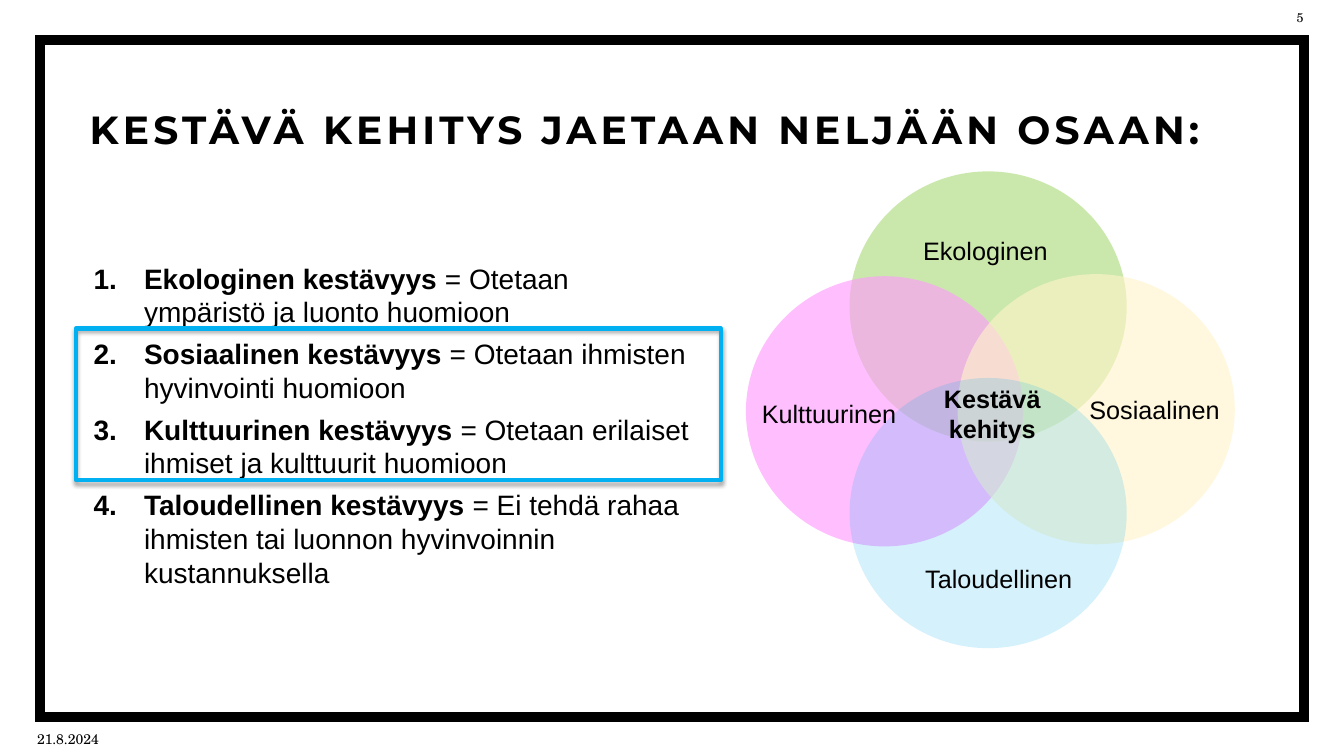
from lxml import etree
from pptx import Presentation
from pptx.dml.color import RGBColor
from pptx.enum.shapes import MSO_SHAPE
from pptx.enum.text import MSO_ANCHOR, MSO_AUTO_SIZE, PP_ALIGN
from pptx.oxml.ns import qn
from pptx.util import Pt

RECTANGLE, ELLIPSE = MSO_SHAPE.RECTANGLE, MSO_SHAPE.OVAL
TOP, MIDDLE = MSO_ANCHOR.TOP, MSO_ANCHOR.MIDDLE
LEFT, CENTER = PP_ALIGN.LEFT, PP_ALIGN.CENTER
NO_AUTOFIT = MSO_AUTO_SIZE.NONE

BLACK = RGBColor(0x00, 0x00, 0x00)
GREEN = RGBColor(0x92, 0xD0, 0x50)
PINK = RGBColor(0xFF, 0x99, 0xFF)
CREAM = RGBColor(0xFF, 0xF4, 0xCA)
BLUE = RGBColor(0x00, 0xB0, 0xF0)

BODY_FONT, TITLE_FONT, SMALL_FONT = "Arial", "Montserrat", "TeX Gyre Schola"

PILLARS = [
    ("Ekologinen kestävyys ", "= Otetaan ympäristö ja luonto huomioon"),
    ("Sosiaalinen kestävyys ", "= Otetaan ihmisten hyvinvointi huomioon"),
    ("Kulttuurinen kestävyys ",
     "= Otetaan erilaiset ihmiset ja kulttuurit huomioon"),
    ("Taloudellinen kestävyys ",
     "= Ei tehdä rahaa ihmisten tai luonnon hyvinvoinnin kustannuksella"),
]

# Left, top, colour and opacity in percent
CIRCLE_SIZE = (198, 193)
CIRCLES = [
    (606.8, 122.4, GREEN, 47),
    (532.8, 197.3, PINK, 62),
    (684, 195.8, CREAM, 62),
    (606.8, 270, BLUE, 17),
]
LABEL_SIZE = (128, 29)
LABELS = [
    ("Ekologinen", 652.3, 164.5),
    ("Sosiaalinen", 771.1, 277.9),
    ("Kulttuurinen", 537.1, 281.2),
    ("Taloudellinen", 653.8, 398.9),
]


def place(box, left, top, width, height):
    box.left, box.top = Pt(left), Pt(top)
    box.width, box.height = Pt(width), Pt(height)


def write(paragraph, text, font=BODY_FONT, size=18, bold=False, spacing=0):
    run = paragraph.add_run()
    run.text = text
    run.font.name, run.font.size, run.font.bold = font, Pt(size), bold
    run.font.color.rgb = BLACK
    if spacing:
        run.font._element.set("spc", str(spacing * 100))


def add_text_frame(slide, left, top, width, height, anchor=TOP):
    box = slide.shapes.add_textbox(Pt(left), Pt(top), Pt(width), Pt(height))
    frame = box.text_frame
    frame.word_wrap = True
    frame.vertical_anchor = anchor
    return frame


def add_label(slide, text, *area, anchor=TOP, align=LEFT, **text_format):
    paragraph = add_text_frame(slide, *area, anchor=anchor).paragraphs[0]
    paragraph.alignment = align
    write(paragraph, text, **text_format)


def add_outline(slide, left, top, width, height, color, weight):
    outline = slide.shapes.add_shape(
        RECTANGLE, Pt(left), Pt(top), Pt(width), Pt(height))
    outline.shadow.inherit = False
    outline.fill.background()
    outline.line.color.rgb = color
    outline.line.width = Pt(weight)
    return outline


def sharpen_corners(outline):
    line = outline._element.spPr.find(qn("a:ln"))
    etree.SubElement(line, qn("a:miter"), lim="800000")


def add_drop_shadow(shape, blur, distance, opacity):
    effects = shape._element.spPr.find(qn("a:effectLst"))
    shadow = etree.SubElement(
        effects, qn("a:outerShdw"), blurRad=str(Pt(blur)),
        dist=str(Pt(distance)), dir="5400000", rotWithShape="0")
    color = etree.SubElement(shadow, qn("a:srgbClr"), val=str(BLACK))
    etree.SubElement(color, qn("a:alpha"), val=str(opacity * 1000))


def add_circle(slide, left, top, color, opacity):
    width, height = CIRCLE_SIZE
    circle = slide.shapes.add_shape(
        ELLIPSE, Pt(left), Pt(top), Pt(width), Pt(height))
    circle.shadow.inherit = False
    circle.line.fill.background()
    circle.fill.solid()
    circle.fill.fore_color.rgb = color
    fill_color = circle._element.spPr.find(
        f"{qn('a:solidFill')}/{qn('a:srgbClr')}")
    etree.SubElement(fill_color, qn("a:alpha"), val=str(opacity * 1000))


def set_title(slide, text):
    title = slide.shapes.title
    place(title, 56.9, 71.3, 852.5, 72.7)
    frame = title.text_frame
    frame.word_wrap = True
    frame.auto_size = NO_AUTOFIT
    frame.vertical_anchor = TOP
    heading = frame.paragraphs[0]
    heading.alignment = LEFT
    write(heading, text, font=TITLE_FONT, size=28, bold=True, spacing=3)


def add_pillar_list(slide):
    frame = add_text_frame(slide, 59.8, 182.9, 443, 320.4)
    for index, (name, meaning) in enumerate(PILLARS):
        item = frame.add_paragraph() if index else frame.paragraphs[0]
        properties = item._p.get_or_add_pPr()
        properties.set("marL", str(Pt(36)))
        properties.set("indent", str(Pt(-36)))
        etree.SubElement(properties, qn("a:buFont"), typeface=BODY_FONT)
        etree.SubElement(properties, qn("a:buAutoNum"), type="arabicPeriod")
        item.line_spacing = 1.0
        item.space_after = Pt(6)
        write(item, name, size=20, bold=True)
        write(item, meaning, size=20)


def main():
    presentation = Presentation()
    presentation.slide_width, presentation.slide_height = Pt(960), Pt(540)
    slide = presentation.slides.add_slide(presentation.slide_layouts[5])

    # Frame, page number and date
    border = add_outline(slide, 28.8, 28.8, 902.9, 483.1, BLACK, 7)
    sharpen_corners(border)
    add_label(slide, "5", 908.6, 0, 40.3, 25.2, anchor=MIDDLE, align=CENTER,
              font=SMALL_FONT, size=9)
    add_label(slide, "21.8.2024", 19.4, 515.5, 113.8, 24.5, anchor=MIDDLE,
              font=SMALL_FONT, size=10)

    # Title and numbered list
    set_title(slide, "KESTÄVÄ KEHITYS JAETAAN NELJÄÄN OSAAN:")
    add_pillar_list(slide)

    # Overlapping circles with their labels
    for circle in CIRCLES:
        add_circle(slide, *circle)
    for text, left, top in LABELS:
        add_label(slide, text, left, top, *LABEL_SIZE)
    add_label(slide, "Kestävä kehitys", 635.3, 270, 146.9, 51, align=CENTER,
              bold=True)

    # Highlight around the second and third items
    highlight = add_outline(slide, 54.2, 234.7, 460.8, 108.3, BLUE, 3)
    add_drop_shadow(highlight, blur=3.1, distance=1.8, opacity=35)

    presentation.save("out.pptx")


if __name__ == "__main__":
    main()
